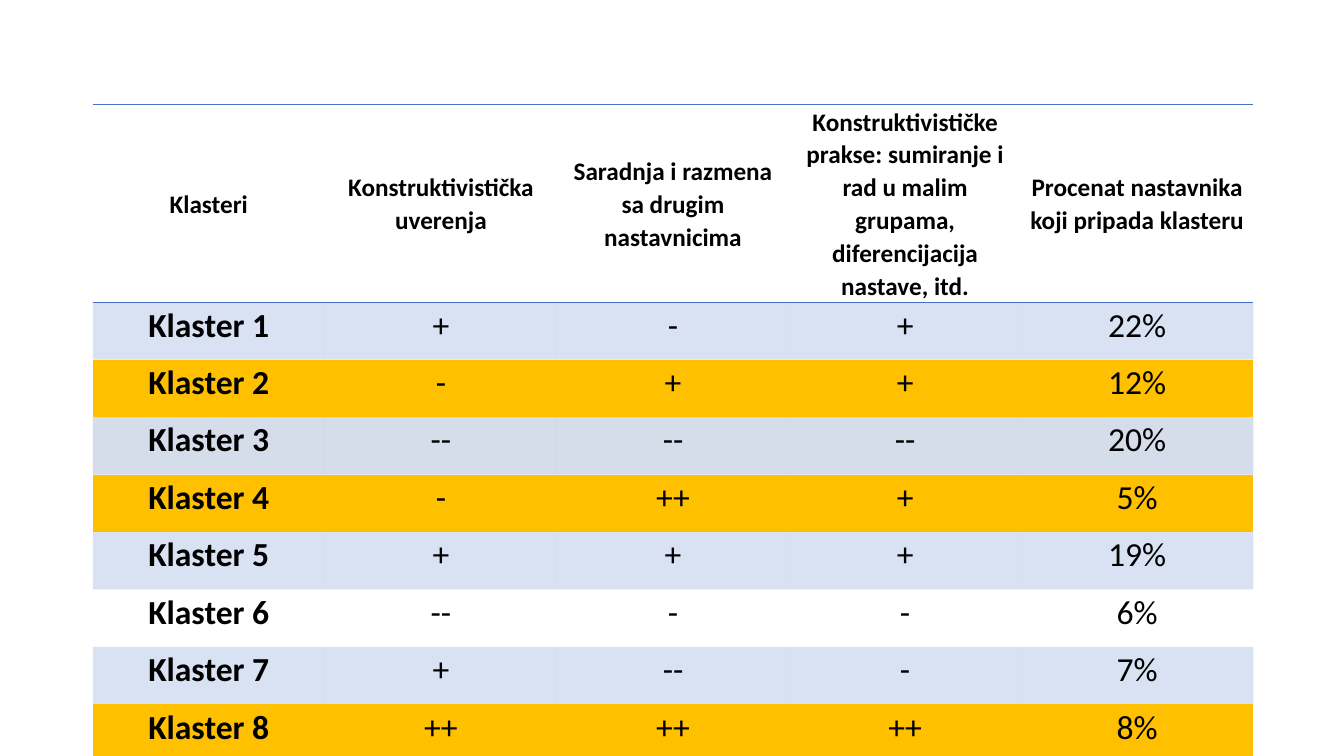
"""Build a slide with a table of eight teacher clusters."""
import pptx
import pptx.util
import pptx.dml.color
import pptx.enum.text
import pptx.oxml
import pptx.oxml.ns
from pptx.util import Inches

HEADS = ["Klasteri", "Konstruktivistička uverenja",
         "Saradnja i razmena sa drugim nastavnicima",
         "Konstruktivističke prakse: sumiranje i rad u malim grupama, "
         "diferencijacija nastave, itd.",
         "Procenat nastavnika koji pripada klasteru"]
ROWS = [
    ("blue", "+", "-", "+", "22%"),
    ("gold", "-", "+", "+", "12%"),
    ("navy", "--", "--", "--", "20%"),
    ("gold", "-", "++", "+", "5%"),
    ("blue", "+", "+", "+", "19%"),
    (None, "--", "-", "-", "6%"),
    ("blue", "+", "--", "-", "7%"),
    ("gold", "++", "++", "++", "8%"),
]
COLORS = {"blue": "4472C4", "navy": "2F5597", "gold": "FFC000", "text": "000000"}
ALPHA = {"blue": 20, "navy": 20}
FONT = "Calibri"
PLAIN = "{2D5ABB26-0587-4C30-8999-92F81FD0307C}"
LEFT, TOP, WIDTH, HEIGHT = 0.92, 1.04, 11.51, 6.46
HEAD, ROW = 1.58, 0.57


def color(name):
    return pptx.dml.color.RGBColor.from_string(COLORS[name])


def write(cell, text, size=24, bold=False, middle=False):
    anchor = pptx.enum.text.MSO_ANCHOR
    cell.vertical_anchor = anchor.MIDDLE if middle else anchor.TOP
    cell.margin_left = cell.margin_right = Inches(0.07)
    cell.margin_top = cell.margin_bottom = 0
    para = cell.text_frame.paragraphs[0]
    para.alignment = pptx.enum.text.PP_ALIGN.CENTER
    para.line_spacing = 1.07
    run = para.add_run()
    run.text = text
    run.font.name = FONT
    run.font.size = pptx.util.Pt(size)
    run.font.bold = bold
    run.font.color.rgb = color("text")


def border(cell, sides):
    space = pptx.oxml.ns.nsdecls("a")
    for side in sides:
        cell._tc.get_or_add_tcPr().append(pptx.oxml.parse_xml(
            f'<a:ln{side} {space} w="12700"><a:solidFill>'
            f'<a:srgbClr val="{COLORS["blue"]}"/></a:solidFill></a:ln{side}>'))


def paint(cell, name):
    if name is None:
        cell.fill.background()
        return
    cell.fill.solid()
    cell.fill.fore_color.rgb = color(name)
    if name in ALPHA:
        tint = cell._tc.tcPr.find(
            "/".join(map(pptx.oxml.ns.qn, ("a:solidFill", "a:srgbClr"))))
        tint.append(pptx.oxml.parse_xml(
            f'<a:alpha {pptx.oxml.ns.nsdecls("a")} val="{ALPHA[name] * 1000}"/>'))


def main():
    deck = pptx.Presentation()
    deck.slide_width, deck.slide_height = Inches(13.33), Inches(7.5)
    slide = deck.slides.add_slide(deck.slide_layouts[6])
    frame = slide.shapes.add_table(
        len(ROWS) + 1, len(HEADS),
        *map(Inches, (LEFT, TOP, WIDTH, HEIGHT)))
    table = frame.table
    frame._element.find(".//" + pptx.oxml.ns.qn("a:tableStyleId")).text = PLAIN
    for col in table.columns:
        col.width = Inches(WIDTH / len(HEADS))
    for num, row in enumerate(table.rows):
        row.height = Inches(ROW if num else HEAD)
    frame.height = Inches(HEIGHT)

    for col, text in enumerate(HEADS):
        cell = table.cell(0, col)
        write(cell, text, size=18, bold=True, middle=True)
        border(cell, "TB")
        paint(cell, None)
    for num, (fill, *marks) in enumerate(ROWS, 1):
        for col, text in enumerate([f"Klaster {num}", *marks]):
            cell = table.cell(num, col)
            write(cell, text, bold=col == 0)
            border(cell, "B" if num == len(ROWS) else "")
            paint(cell, fill)
    deck.save("out.pptx")


if __name__ == "__main__":
    main()
